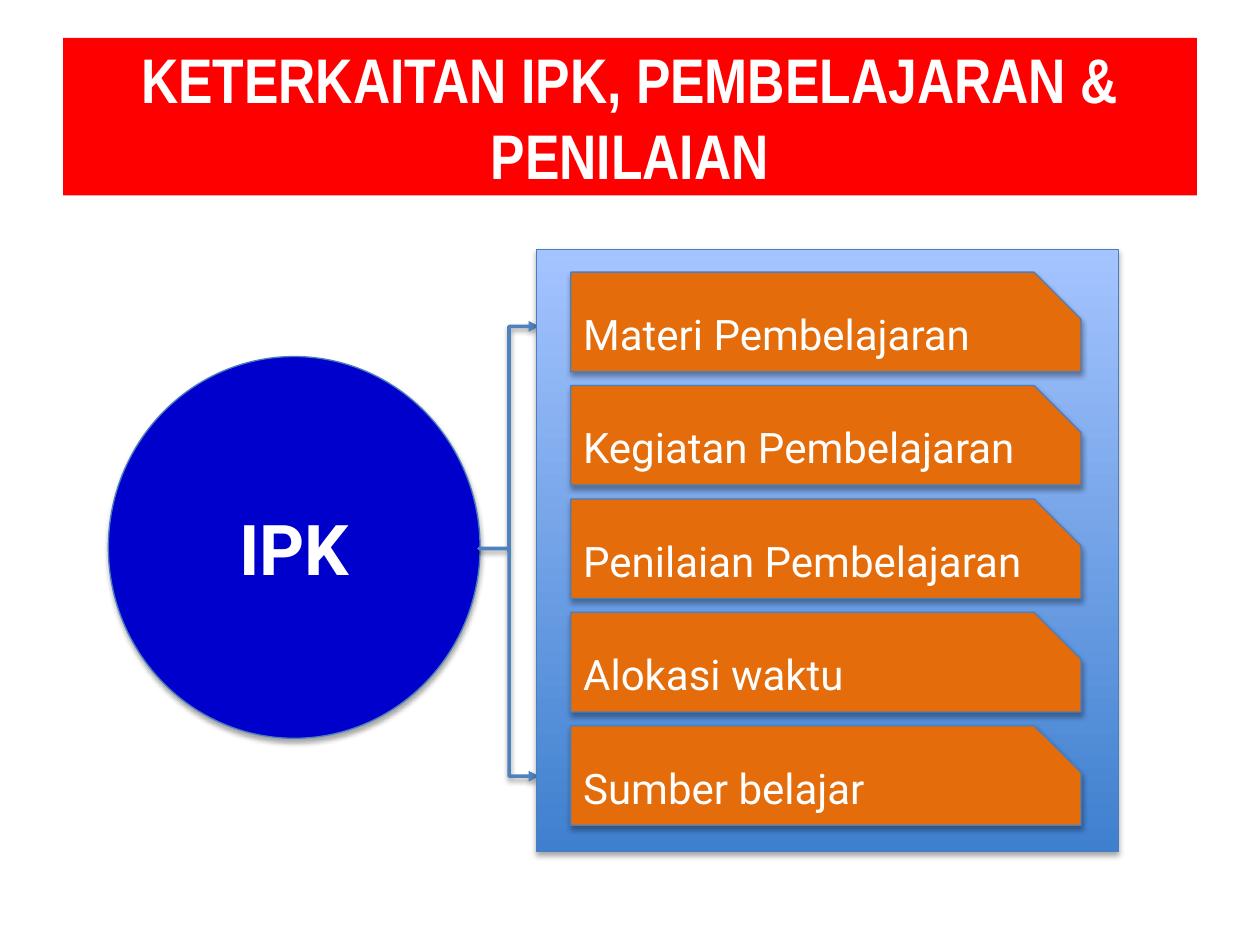
import pptx
import pptx.util
import pptx.dml.color
import pptx.enum.shapes
import pptx.enum.text
import pptx.oxml
import pptx.oxml.ns

Inches = pptx.util.Inches
Pt = pptx.util.Pt
MSO_SHAPE = pptx.enum.shapes.MSO_SHAPE
PP_ALIGN = pptx.enum.text.PP_ALIGN
NS = pptx.oxml.ns.nsdecls("a")

COLORS = {
    "title": "FF0000",
    "circle": "0000CC",
    "item": "E46C0A",
    "outline": "4B7EBC",
    "brace": "4F81BD",
    "panel_bottom": "3F80CE",
    "panel_top": "A4C4FF",
    "text": "FFFFFF",
}
ITEMS = [
    "Materi Pembelajaran",
    "Kegiatan Pembelajaran",
    "Penilaian Pembelajaran",
    "Alokasi waktu",
    "Sumber belajar",
]


def rgb(name):
    """Return the named palette colour."""
    return pptx.dml.color.RGBColor.from_string(COLORS[name])


def set_text(sp, text, size, font="Roboto", bold=False, align=PP_ALIGN.CENTER):
    """Write one formatted paragraph, vertically centred, into a shape."""
    tf = sp.text_frame
    tf.word_wrap = True
    tf.auto_size = pptx.enum.text.MSO_AUTO_SIZE.NONE
    tf.vertical_anchor = pptx.enum.text.MSO_ANCHOR.MIDDLE
    p = tf.paragraphs[0]
    p.alignment = align
    r = p.add_run()
    r.text = text
    r.font.name, r.font.size, r.font.bold = font, Pt(size), bold
    r.font.color.rgb = rgb("text")


def add_shadow(sp, distance, opacity):
    """Give a shape a soft shadow that falls straight down."""
    sp.shadow.inherit = False
    effects = sp._element.spPr.find(pptx.oxml.ns.qn("a:effectLst"))
    effects.append(pptx.oxml.parse_xml(
        f'<a:outerShdw {NS} blurRad="{Pt(3.1)}" dist="{Pt(distance)}" dir="5400000" '
        f'rotWithShape="0"><a:srgbClr val="000000"><a:alpha val="{opacity * 1000}"/>'
        '</a:srgbClr></a:outerShdw>'))


def add_block(shapes, kind, box, fill=None):
    """Add an outlined, shadowed preset shape with an optional solid fill."""
    sp = shapes.add_shape(kind, *map(Inches, box))
    if fill:
        sp.fill.solid()
        sp.fill.fore_color.rgb = rgb(fill)
    sp.line.color.rgb = rgb("outline")
    sp.line.width = Pt(0.75)
    add_shadow(sp, 1.8, 35)
    return sp


def add_title(s):
    """Format the title placeholder as a red banner."""
    sp = s.shapes.title
    sp.left, sp.top, sp.width, sp.height = map(Inches, (0.5, 0.3, 9, 1.25))
    sp.fill.solid()
    sp.fill.fore_color.rgb = rgb("title")
    set_text(sp, "KETERKAITAN IPK, PEMBELAJARAN & PENILAIAN", 36,
             font="Arial Narrow", bold=True)


def add_brace(s):
    """Add the square brace with an arrowhead at both ends."""
    sp = s.shapes.add_shape(MSO_SHAPE.LEFT_BRACE, *map(Inches, (3.8, 2.59, 0.48, 3.57)))
    sp.adjustments[0], sp.adjustments[1] = 0, 0.494
    sp.fill.background()
    sp.line.color.rgb = rgb("brace")
    sp.line.width = Pt(2)
    ln = sp.line._get_or_add_ln()
    for end in ("headEnd", "tailEnd"):
        ln.append(pptx.oxml.parse_xml(f'<a:{end} {NS} type="triangle"/>'))
    add_shadow(sp, 1.6, 38)


def add_panel(s):
    """Add the gradient panel grouped with its column of items."""
    shapes = s.shapes.add_group_shape().shapes
    panel = add_block(shapes, MSO_SHAPE.RECTANGLE, (4.26, 1.98, 4.62, 4.78))
    panel.fill.gradient()
    panel.fill.gradient_angle = 90
    for stop, name, position in zip(panel.fill.gradient_stops,
                                    ("panel_bottom", "panel_top"), (0, 1)):
        stop.color.rgb = rgb(name)
        stop.position = position
    for i, text in enumerate(ITEMS):
        sp = add_block(shapes, MSO_SHAPE.SNIP_1_RECTANGLE,
                       (4.53, 2.16 + 0.9 * i, 4.05, 0.79), "item")
        sp.adjustments[0] = 0.471
        set_text(sp, text, 24, align=PP_ALIGN.LEFT)


def main():
    """Build the slide and save it."""
    prs = pptx.Presentation()
    prs.slide_width, prs.slide_height = Inches(10), Inches(7.5)
    s = prs.slides.add_slide(prs.slide_layouts[5])
    add_title(s)
    circle = add_block(s.shapes, MSO_SHAPE.OVAL, (0.86, 2.83, 2.95, 3.03), "circle")
    set_text(circle, "IPK", 40, bold=True)
    add_brace(s)
    add_panel(s)
    prs.save("out.pptx")


if __name__ == "__main__":
    main()
